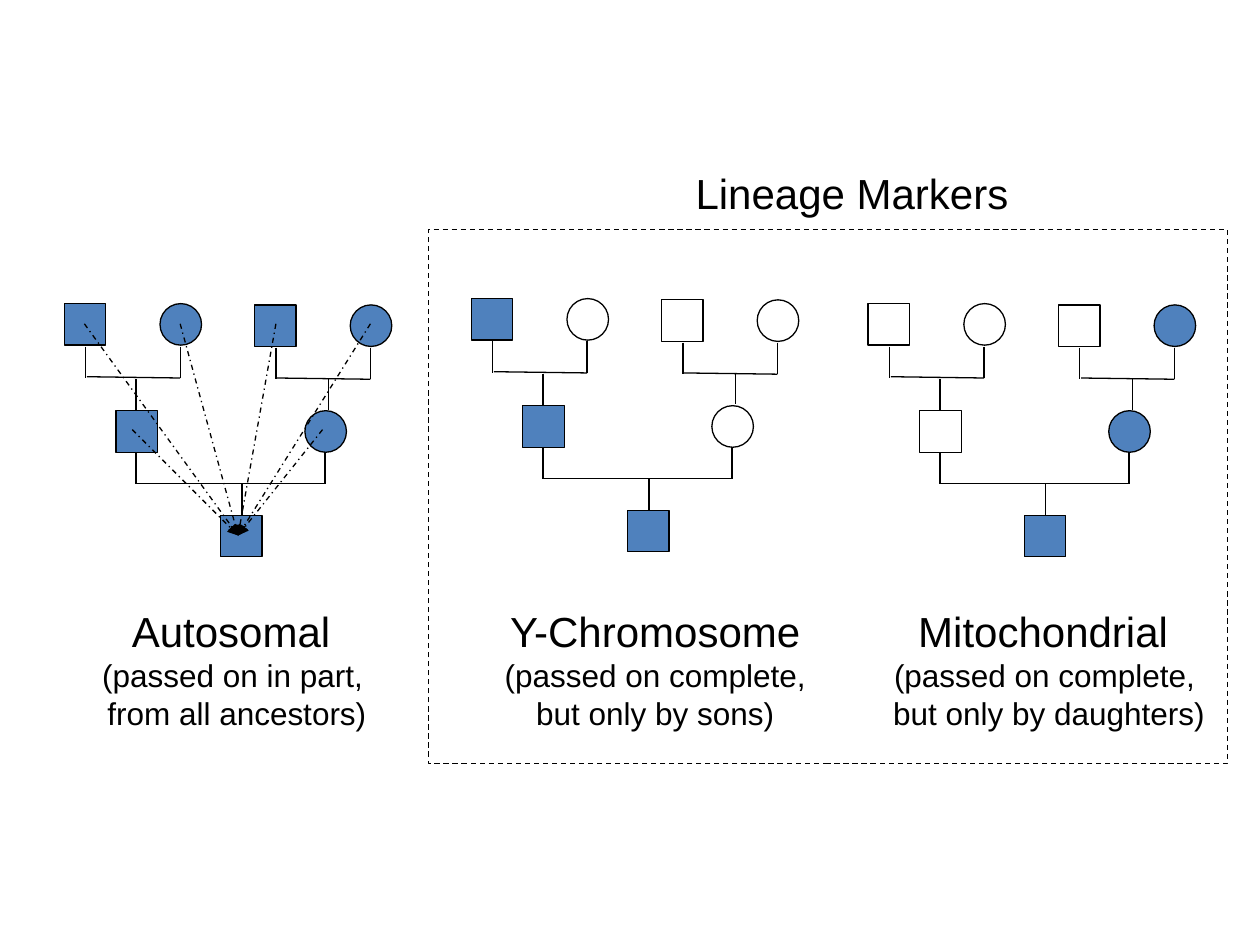
from typing import NamedTuple

from lxml import etree
from pptx import Presentation
from pptx.dml.color import RGBColor
from pptx.enum.dml import MSO_LINE
from pptx.enum.shapes import MSO_CONNECTOR, MSO_SHAPE
from pptx.enum.text import MSO_ANCHOR, MSO_AUTO_SIZE, PP_ALIGN
from pptx.oxml.ns import qn
from pptx.util import Inches, Pt

RECT, OVAL = MSO_SHAPE.RECTANGLE, MSO_SHAPE.OVAL
STRAIGHT = MSO_CONNECTOR.STRAIGHT
DASH, DASH_DOT = MSO_LINE.DASH, MSO_LINE.DASH_DOT
LEFT, CENTER, TOP = PP_ALIGN.LEFT, PP_ALIGN.CENTER, MSO_ANCHOR.TOP
GROW = MSO_AUTO_SIZE.SHAPE_TO_FIT_TEXT
COLORS = {"ink": "000000", "shared": "4F81BD"}
FONT = "Arial"
SIDE = 0.33


class Person(NamedTuple):
    name: str
    kind: int
    x: float
    y: float


class Link(NamedTuple):
    x1: float
    y1: float
    x2: float
    y2: float


class Tree(NamedTuple):
    x: float
    y: float
    shared: set[str]
    label: list[str]
    box: tuple[float, float, float, float]
    wrap: bool


PEOPLE = [
    Person("pat_sire", RECT, 0, 0),
    Person("pat_dam", OVAL, 0.76, 0),
    Person("mat_sire", RECT, 1.51, 0.01),
    Person("mat_dam", OVAL, 2.27, 0.01),
    Person("father", RECT, 0.41, 0.85),
    Person("mother", OVAL, 1.91, 0.85),
    Person("child", RECT, 1.24, 1.68),
]
LINKS = [
    Link(0.17, 0.34, 0.17, 0.59),
    Link(0.92, 0.34, 0.92, 0.59),
    Link(0.18, 0.58, 0.92, 0.59),
    Link(1.68, 0.35, 1.68, 0.6),
    Link(2.43, 0.35, 2.43, 0.6),
    Link(1.69, 0.59, 2.43, 0.6),
    Link(0.57, 0.6, 0.57, 0.85),
    Link(2.1, 0.59, 2.1, 0.84),
    Link(0.57, 1.18, 0.57, 1.43),
    Link(2.07, 1.18, 2.07, 1.43),
    Link(0.57, 1.43, 2.07, 1.43),
    Link(1.41, 1.43, 1.41, 1.68),
]
SOURCES = [(0.67, 2.57), (1.05, 3.41), (1.43, 2.57),
           (2.19, 2.57), (2.94, 2.57), (2.56, 3.41)]
TARGET = (1.89, 4.25)
TREES = [
    Tree(3.74, 2.37, {"pat_sire", "father", "child"},
         ["Y-Chromosome", "(passed on complete, but only by sons)"],
         (3.71, 4.76, 2.98, 1.1), True),
    Tree(6.89, 2.41, {"mat_dam", "mother", "child"},
         ["Mitochondrial ", "(passed on complete, ", "but only by daughters)"],
         (6.95, 4.76, 2.75, 1.1), False),
    Tree(0.51, 2.41, {p.name for p in PEOPLE},
         ["Autosomal ", "(passed on in part, ", "from all ancestors)"],
         (0.34, 4.76, 3.08, 1.1), True),
]


def color(name: str) -> RGBColor:
    return RGBColor.from_string(COLORS[name])


def ink(line, dash=None) -> None:
    line.color.rgb = color("ink")
    line.width = Pt(0.75)
    if dash is not None:
        line.dash_style = dash


def add_link(slide, link: Link, dash=None, arrow: bool = False) -> None:
    wire = slide.shapes.add_connector(STRAIGHT, *map(Inches, link))
    ink(wire.line, dash)
    props = wire._element.spPr
    if arrow:
        etree.SubElement(props.find(qn("a:ln")), qn("a:tailEnd"), type="triangle")
    etree.SubElement(props, qn("a:effectLst"))


def add_form(slide, kind: int, box: tuple, fill: bool = False, dash=None) -> None:
    form = slide.shapes.add_shape(kind, *map(Inches, box))
    form.shadow.inherit = False
    if fill:
        form.fill.solid()
        form.fill.fore_color.rgb = color("shared")
    else:
        form.fill.background()
    ink(form.line, dash)


def write(frame, rows: list[str], align: int, wrap: bool) -> None:
    frame.text = "\n".join(rows)
    frame.word_wrap = wrap
    frame.auto_size = GROW
    frame.vertical_anchor = TOP
    for i, para in enumerate(frame.paragraphs):
        para.alignment = align
        for run in para.runs:
            run.font.name = FONT
            run.font.size = Pt(18 if i else 24)
            run.font.color.rgb = color("ink")


def add_tree(slide, tree: Tree) -> None:
    for link in LINKS:
        add_link(slide, Link(tree.x + link.x1, tree.y + link.y1,
                             tree.x + link.x2, tree.y + link.y2))
    for who in PEOPLE:
        box = (tree.x + who.x, tree.y + who.y, SIDE, SIDE)
        add_form(slide, who.kind, box, who.name in tree.shared)
    label = slide.shapes.add_textbox(*map(Inches, tree.box))
    write(label.text_frame, tree.label, CENTER, tree.wrap)


def main() -> None:
    deck = Presentation()
    deck.slide_width, deck.slide_height = Inches(10), Inches(7.5)
    slide = deck.slides.add_slide(deck.slide_layouts[5])
    title = slide.shapes.title
    title.left, title.top = Inches(5.42), Inches(1.28)
    title.width, title.height = Inches(2.69), Inches(0.5)
    write(title.text_frame, ["Lineage Markers"], LEFT, False)
    for tree in TREES:
        add_tree(slide, tree)
    for source in SOURCES:
        add_link(slide, Link(*source, *TARGET), DASH_DOT, True)
    add_form(slide, RECT, (3.4, 1.82, 6.34, 4.24), dash=DASH)
    deck.save("out.pptx")


if __name__ == "__main__":
    main()
